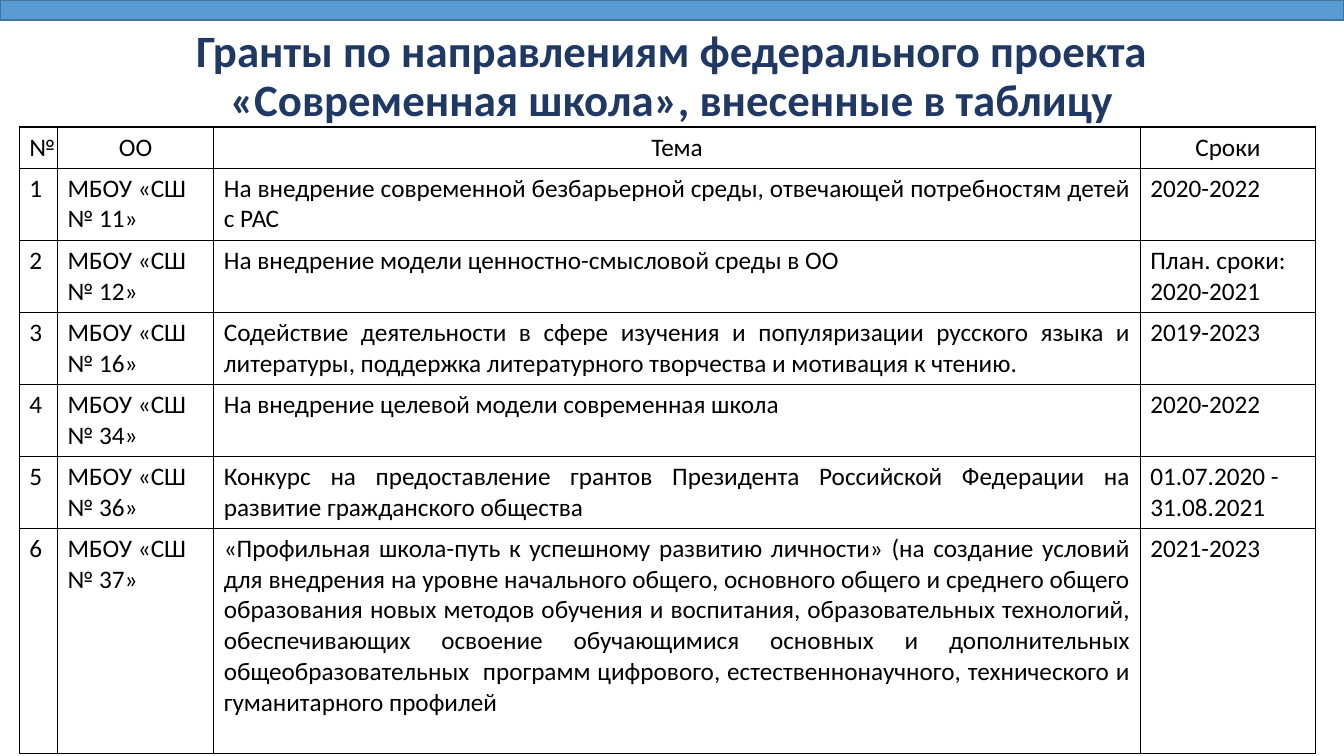
from dataclasses import dataclass

from lxml import etree
from pptx import Presentation
from pptx import util as u
from pptx.dml.color import RGBColor
from pptx.enum import shapes, text
from pptx.oxml import ns

SLIDE_WIDTH, SLIDE_HEIGHT = u.Inches(13.33), u.Inches(7.5)
FONT = "Calibri"
COLOURS = {"bar": "5B9BD5", "bar_line": "43739E", "title": "203864", "ink": "000000"}
LEFT, CENTRE, JUSTIFY = text.PP_ALIGN.LEFT, text.PP_ALIGN.CENTER, text.PP_ALIGN.JUSTIFY


@dataclass(frozen=True)
class Column:
    heading: str
    width: float  # percent of the slide's width
    heading_align: text.PP_ALIGN
    body_align: text.PP_ALIGN


@dataclass(frozen=True)
class Grant:
    school: int
    topic: str
    term: str


COLUMNS = [
    Column("№", 2.85, LEFT, LEFT),
    Column("ОО", 11.63, CENTRE, LEFT),
    Column("Тема", 68.94, CENTRE, JUSTIFY),
    Column("Сроки", 13.05, CENTRE, LEFT),
]
GRANTS = [
    Grant(11, "На внедрение современной безбарьерной среды, отвечающей потребностям "
              "детей с РАС", "2020-2022"),
    Grant(12, "На внедрение модели ценностно-смысловой среды в ОО",
          "План. сроки: 2020-2021"),
    Grant(16, "Содействие деятельности в сфере изучения и популяризации русского языка "
              "и литературы, поддержка литературного творчества и мотивация к чтению.",
          "2019-2023"),
    Grant(34, "На внедрение целевой модели современная школа", "2020-2022"),
    Grant(36, "Конкурс на предоставление грантов Президента Российской Федерации на "
              "развитие гражданского общества", "01.07.2020 -\n31.08.2021"),
    Grant(37, "«Профильная школа-путь к успешному развитию личности» (на создание "
              "условий для внедрения на уровне начального общего, основного общего и "
              "среднего общего образования новых методов обучения и воспитания, "
              "образовательных технологий, обеспечивающих освоение обучающимися "
              "основных и дополнительных общеобразовательных  программ цифрового, "
              "естественнонаучного, технического и гуманитарного профилей",
          "2021-2023"),
]
# Percent of the slide's height
HEADING_ROW, GRANT_ROW, LAST_ROW = 5.45, 9.53, 29.8


def across(percent: float) -> int:
    return round(SLIDE_WIDTH * percent / 100)


def down(percent: float) -> int:
    return round(SLIDE_HEIGHT * percent / 100)


def colour(name: str) -> RGBColor:
    return RGBColor.from_string(COLOURS[name])


def write(frame, content: str, *, size: float, ink: str = "ink", bold: bool = False,
          align: text.PP_ALIGN = LEFT, spacing: float = 1.0) -> None:
    """Fill a text frame, one paragraph per line of content."""
    frame.word_wrap = True
    for index, line in enumerate(content.split("\n")):
        paragraph = frame.add_paragraph() if index else frame.paragraphs[0]
        paragraph.alignment = align
        paragraph.line_spacing = spacing
        run = paragraph.add_run()
        run.text = line
        run.font.name = FONT
        run.font.size = u.Pt(size)
        run.font.bold = bold
        run.font.color.rgb = colour(ink)


def add_borders(cell) -> None:
    properties = cell._tc.get_or_add_tcPr()
    for position, side in enumerate(("lnL", "lnR", "lnT", "lnB")):
        line = etree.Element(ns.qn(f"a:{side}"), w=str(u.Pt(1)))
        fill = etree.SubElement(line, ns.qn("a:solidFill"))
        etree.SubElement(fill, ns.qn("a:srgbClr"), val=COLOURS["ink"])
        properties.insert(position, line)


def add_title(slide) -> None:
    box = slide.shapes.add_textbox(across(6.9), down(5.33), across(86.2), down(9.87))
    box.text_frame.vertical_anchor = text.MSO_ANCHOR.MIDDLE
    write(box.text_frame,
          "Гранты по направлениям федерального проекта "
          "«Современная школа», внесенные в таблицу",
          size=32, ink="title", bold=True, align=CENTRE, spacing=0.9)


def add_top_bar(slide) -> None:
    bar = slide.shapes.add_shape(shapes.MSO_SHAPE.RECTANGLE, 0, 0, SLIDE_WIDTH, down(2.67))
    bar.shadow.inherit = False
    bar.fill.solid()
    bar.fill.fore_color.rgb = colour("bar")
    bar.line.color.rgb = colour("bar_line")
    bar.line.width = u.Pt(1)


def add_grants_table(slide) -> None:
    heights = [HEADING_ROW] + [GRANT_ROW] * (len(GRANTS) - 1) + [LAST_ROW]
    table = slide.shapes.add_table(
        len(heights), len(COLUMNS), across(1.43), down(16.8),
        across(sum(column.width for column in COLUMNS)), down(sum(heights))).table
    table.first_row = table.horz_banding = False
    for table_column, column in zip(table.columns, COLUMNS):
        table_column.width = across(column.width)
    for table_row, height in zip(table.rows, heights):
        table_row.height = down(height)

    rows = [[column.heading for column in COLUMNS]]
    rows += [[str(number), f"МБОУ «СШ № {grant.school}»", grant.topic, grant.term]
             for number, grant in enumerate(GRANTS, start=1)]
    for row_index, row in enumerate(rows):
        for column_index, (column, content) in enumerate(zip(COLUMNS, row)):
            cell = table.cell(row_index, column_index)
            cell.fill.background()
            add_borders(cell)
            write(cell.text_frame, content, size=18,
                  align=column.body_align if row_index else column.heading_align)


def main() -> None:
    presentation = Presentation()
    presentation.slide_width, presentation.slide_height = SLIDE_WIDTH, SLIDE_HEIGHT
    slide = presentation.slides.add_slide(presentation.slide_layouts[6])
    add_title(slide)
    add_top_bar(slide)
    add_grants_table(slide)
    presentation.save("out.pptx")


if __name__ == "__main__":
    main()
